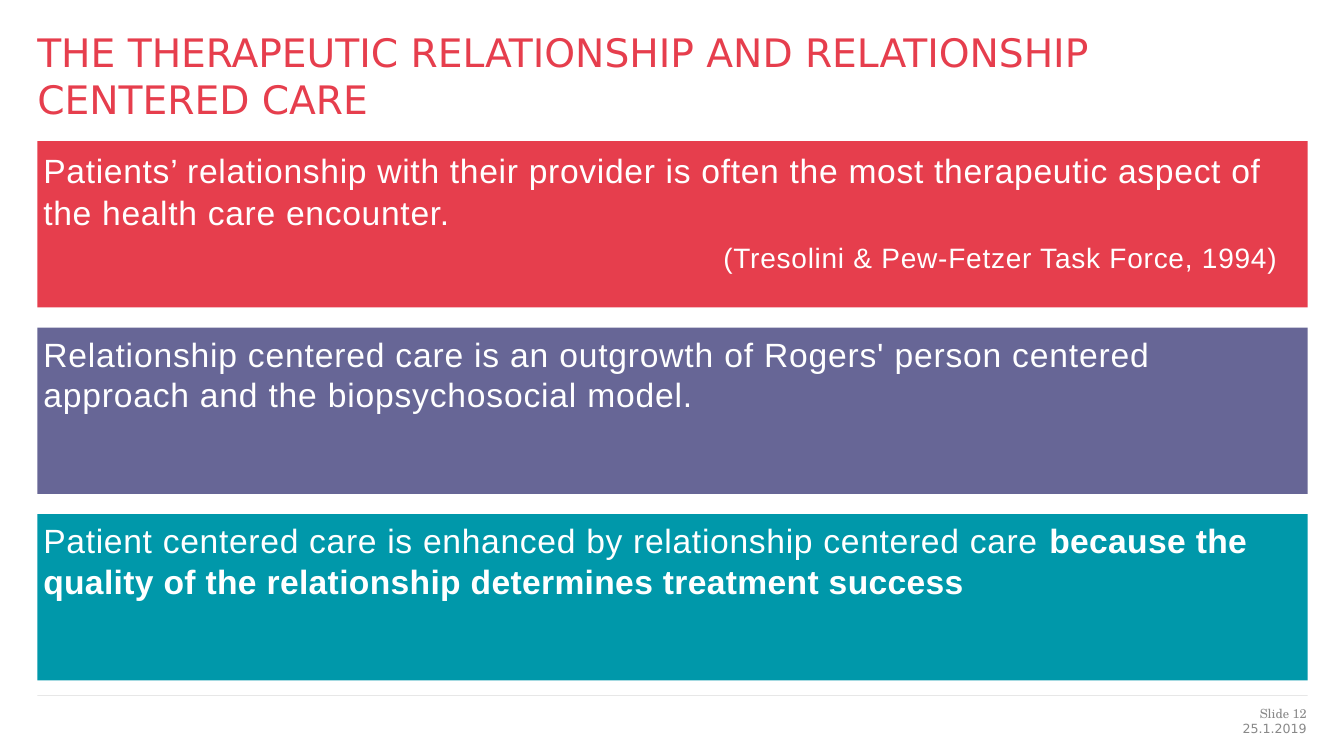
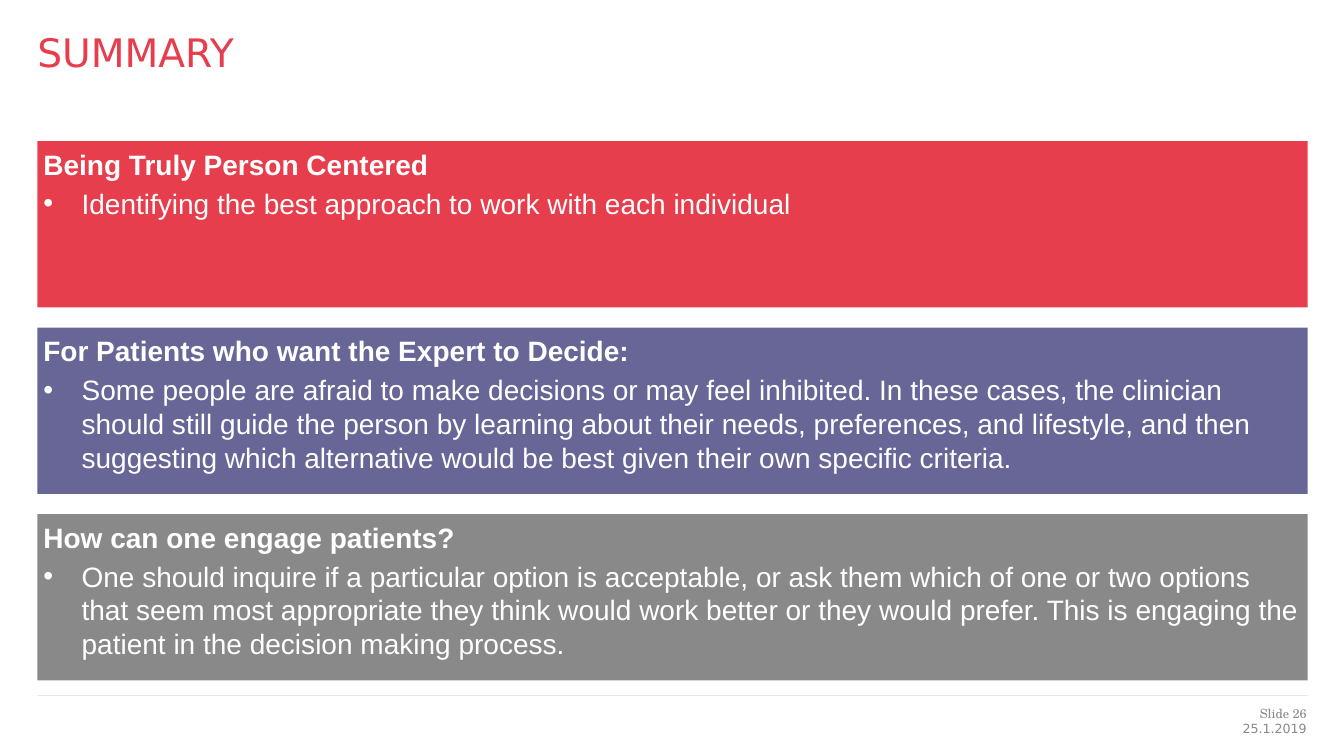
from lxml import etree
from pptx import Presentation
from pptx import util as u
from pptx.dml.color import RGBColor
from pptx.enum import shapes, text
from pptx.oxml.ns import qn

RED = RGBColor(0xE6, 0x3E, 0x4D)
PURPLE = RGBColor(0x67, 0x66, 0x96)
TEAL = RGBColor(0x00, 0x98, 0xAA)
GREY = RGBColor(0x89, 0x89, 0x89)
RULE = RGBColor(0x26, 0x26, 0x26)
WHITE = RGBColor(0xFF, 0xFF, 0xFF)
BODY_FONT, TITLE_FONT, NUMBER_FONT = "Arial", "DejaVu Sans", "TeX Gyre Schola"
DATE = "25.1.2019"

# Paragraph kinds: size in points, and what differs from plain left-aligned text
KINDS = {
    "quote": dict(size=24, line_spacing=1.06),
    "citation": dict(size=20, line_spacing=1.06, right=24),
    "statement": dict(size=24),
    "heading": dict(size=20, bold=True),
    "bullet": dict(size=20, hanging=38),
}

# Each band: fill, paragraphs; each paragraph: kind, runs of (text, bold, letter spacing in 1/100 pt)
SLIDES = [
    ("THE THERAPEUTIC RELATIONSHIP AND RELATIONSHIP CENTERED CARE", 12, [
        (RED, [
            ("quote", [("Patients’ relationship with their provider is often the most therapeutic "
                        "aspect of the health care encounter.", False, 50)]),
            ("citation", [("(Tresolini & Pew-Fetzer Task Force, 1994)", False, 55)]),
        ]),
        (PURPLE, [
            ("statement", [("Relationship centered care is an outgrowth of Rogers' person centered "
                            "approach and the biopsychosocial model.", False, 60)]),
        ]),
        (TEAL, [
            ("statement", [
                ("Patient centered care is enhanced by relationship centered care ", False, 50),
                ("because the quality of the relationship determines treatment success", True, 25),
            ]),
        ]),
    ]),
    ("SUMMARY", 26, [
        (RED, [
            ("heading", [("Being Truly Person Centered", True, 0)]),
            ("bullet", [("Identifying the best approach to work with each individual", False, 0)]),
        ]),
        (PURPLE, [
            ("heading", [("For Patients who want the Expert to Decide:", True, 0)]),
            ("bullet", [("Some people are afraid to make decisions or may feel inhibited. In these "
                         "cases, the clinician should still guide the person by learning about their "
                         "needs, preferences, and lifestyle, and then suggesting which alternative "
                         "would be best given their own specific criteria.", False, 0)]),
        ]),
        (GREY, [
            ("heading", [("How can one engage patients?", True, 0)]),
            ("bullet", [("One should inquire if a particular option is acceptable, or ask them which "
                         "of one or two options that seem most appropriate they think would work "
                         "better or they would prefer. This is engaging the patient in the decision "
                         "making process.", False, 0)]),
        ]),
    ]),
]

# Layout in px, 100 px to the inch
SLIDE_W, SLIDE_H = 1333, 750
LEFT, WIDTH = 37, 1260
TITLE_TOP, TITLE_H = 28, 94
BAND_TOP, BAND_H, BAND_GAP, BAND_INSET = 140, 165, 20, 6
RULE_TOP = 690
FOOTER_LEFT, FOOTER_W = 1111, 185


def px(length):
    return u.Emu(length * 9144)


def set_frame(frame, inset=0):
    frame.word_wrap = True
    frame.auto_size = text.MSO_AUTO_SIZE.NONE
    frame.vertical_anchor = text.MSO_ANCHOR.TOP
    frame.margin_left = frame.margin_right = px(inset)
    frame.margin_top = frame.margin_bottom = px(inset)


def set_font(font, name, size, color):
    font.name, font.size = name, u.Pt(size)
    font.color.rgb = color


def add_title(slide, wording):
    title = slide.shapes.title
    title.left, title.top, title.width, title.height = map(px, (LEFT, TITLE_TOP, WIDTH, TITLE_H))
    set_frame(title.text_frame)
    title.text_frame.text = wording
    line = title.text_frame.paragraphs[0]
    line.alignment = text.PP_ALIGN.LEFT
    set_font(line.font, TITLE_FONT, 28, RED)


def fill_paragraph(paragraph, kind, runs, first):
    style = KINDS[kind]
    properties = paragraph._p.get_or_add_pPr()
    if "hanging" in style:
        indent = px(style["hanging"])
        properties.set("marL", str(indent))
        properties.set("indent", str(-indent))
        etree.SubElement(properties, qn("a:buFont"), typeface=BODY_FONT)
        etree.SubElement(properties, qn("a:buChar"), char="•")
    if "right" in style:
        properties.set("marR", str(px(style["right"])))
    paragraph.alignment = text.PP_ALIGN.RIGHT if "right" in style else text.PP_ALIGN.LEFT
    paragraph.line_spacing = style.get("line_spacing")
    paragraph.space_before = u.Pt(0 if first else style["size"] / 5)
    set_font(paragraph.font, BODY_FONT, style["size"], WHITE)
    paragraph.font.bold = style.get("bold", False)
    for wording, bold, spacing in runs:
        run = paragraph.add_run()
        run.text = wording
        if bold != paragraph.font.bold:
            run.font.bold = bold
        if spacing:
            run._r.get_or_add_rPr().set("spc", str(spacing))


def add_band(slide, row, color, paragraphs):
    top = BAND_TOP + row * (BAND_H + BAND_GAP)
    band = slide.shapes.add_shape(shapes.MSO_SHAPE.RECTANGLE, *map(px, (LEFT, top, WIDTH, BAND_H)))
    band.shadow.inherit = False
    band.fill.solid()
    band.fill.fore_color.rgb = color
    band.line.fill.background()
    frame = band.text_frame
    set_frame(frame, BAND_INSET)
    for i, (kind, runs) in enumerate(paragraphs):
        paragraph = frame.add_paragraph() if i else frame.paragraphs[0]
        fill_paragraph(paragraph, kind, runs, first=i == 0)


def add_footer(slide, number):
    rule = slide.shapes.add_connector(
        shapes.MSO_CONNECTOR.STRAIGHT, *map(px, (LEFT, RULE_TOP, LEFT + WIDTH, RULE_TOP)))
    rule.line.color.rgb = RULE
    rule.line.width = u.Pt(0.25)
    shade = rule.line._ln.find(".//" + qn("a:srgbClr"))
    etree.SubElement(shade, qn("a:alpha"), val="31000")
    etree.SubElement(rule._element.spPr, qn("a:effectLst"))
    for wording, font, top, height in ((DATE, TITLE_FONT, 715, 20),
                                       (f"Slide {number}", NUMBER_FONT, 700, 14)):
        label = slide.shapes.add_textbox(*map(px, (FOOTER_LEFT, top, FOOTER_W, height)))
        set_frame(label.text_frame)
        line = label.text_frame.paragraphs[0]
        line.text = wording
        line.alignment = text.PP_ALIGN.RIGHT
        set_font(line.font, font, 9, GREY)


def main():
    deck = Presentation()
    deck.slide_width, deck.slide_height = px(SLIDE_W), px(SLIDE_H)
    title_only = deck.slide_layouts[5]
    for title, number, bands in SLIDES:
        slide = deck.slides.add_slide(title_only)
        add_title(slide, title)
        for row, (color, paragraphs) in enumerate(bands):
            add_band(slide, row, color, paragraphs)
        add_footer(slide, number)
    deck.save("out.pptx")


if __name__ == "__main__":
    main()
